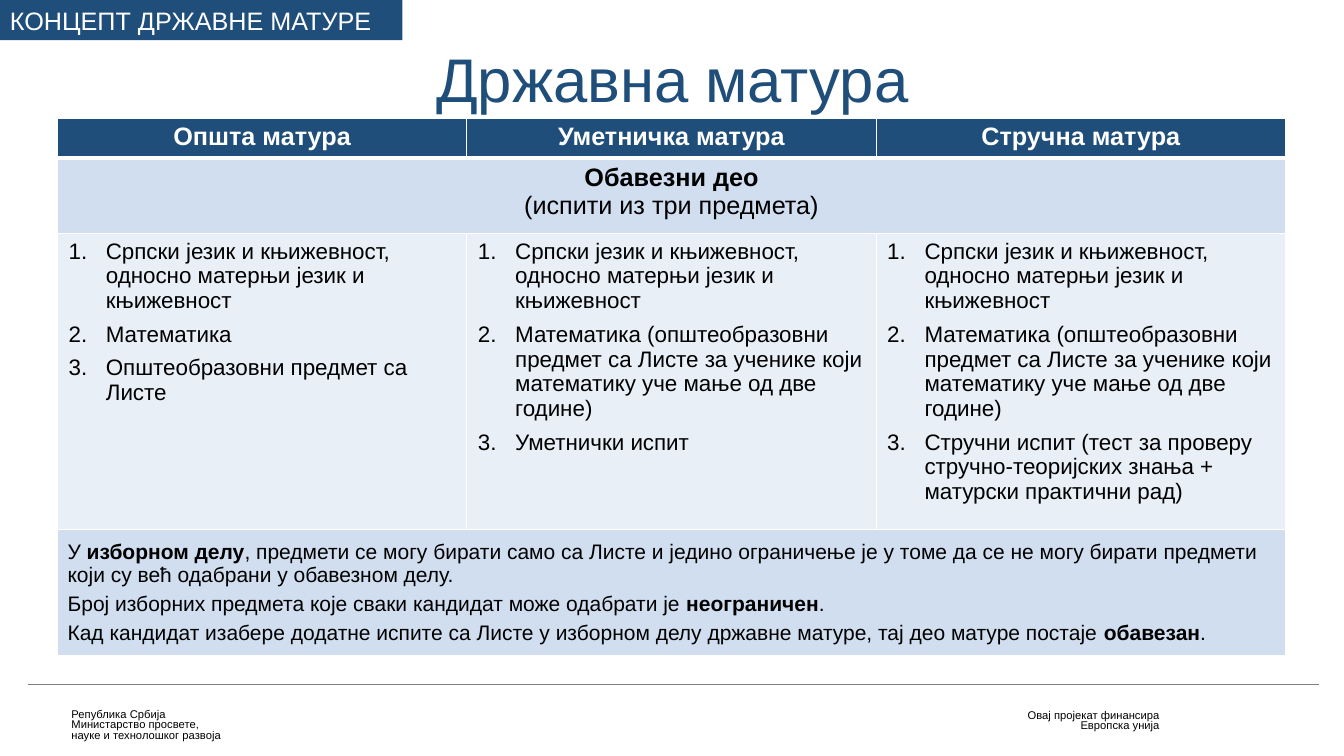
"""Builds the slide that compares the three kinds of state graduation exam."""
import pptx
import pptx.dml.color
import pptx.enum.shapes
import pptx.enum.text
import pptx.oxml.ns
import pptx.util
import lxml.etree

Inches = pptx.util.Inches
Align = pptx.enum.text.PP_ALIGN
Anchor = pptx.enum.text.MSO_ANCHOR

NAVY, WHITE, BLACK, GREY = "1E4E79", "FFFFFF", "000000", "7F7F7F"
BAND, PALE = "D1DEEF", "E9EFF7"
COLUMN_WIDTH = 4.06
ROW_HEIGHTS = [0.4, 0.75, 2.9, 1.25]

HEADERS = ["Општа матура", "Уметничка матура", "Стручна матура"]
LANGUAGE = "Српски језик и књижевност, односно матерњи језик и књижевност"
MATHEMATICS = ("Математика (општеобразовни предмет са Листе за ученике "
               "који математику уче мање од две године)")
EXAMS = [
    [LANGUAGE, "Математика", "Општеобразовни предмет са Листе"],
    [LANGUAGE, MATHEMATICS, "Уметнички испит"],
    [LANGUAGE, MATHEMATICS,
     "Стручни испит (тест за проверу стручно-теоријских знања + матурски практични рад)"],
]
ELECTIVE = [
    "У *изборном делу*, предмети се могу бирати само са Листе и једино ограничење је "
    "у томе да се не могу бирати предмети који су већ одабрани у обавезном делу.",
    "Број изборних предмета које сваки кандидат може одабрати је *неограничен*.",
    "Кад кандидат изабере додатне испите са Листе у изборном делу државне матуре, "
    "тај део матуре постаје *обавезан*.",
]


def color(value):
    """Return the colour for a hex string."""
    return pptx.dml.color.RGBColor.from_string(value)


def add_xml(parent, tag, **attributes):
    """Append a drawing element to a parent and return it."""
    return lxml.etree.SubElement(parent, pptx.oxml.ns.qn(tag), attributes)


def number_paragraph(paragraph):
    """Give a paragraph a hanging automatic number."""
    properties = paragraph._p.get_or_add_pPr()
    properties.set("marL", str(Inches(0.38)))
    properties.set("indent", str(Inches(-0.37)))
    add_xml(add_xml(properties, "a:buClr"), "a:srgbClr", val=BLACK)
    add_xml(properties, "a:buFont", typeface="+mj-lt")
    add_xml(properties, "a:buAutoNum", type="arabicPeriod")


def write_text(frame, paragraphs, size=18, ink=BLACK, align=Align.LEFT, spacing=None,
               before=0, after=0, numbered=False):
    """Fill a text frame with paragraphs, where asterisks enclose bold words."""
    frame.word_wrap = True
    for index, text in enumerate(paragraphs):
        paragraph = frame.add_paragraph() if index else frame.paragraphs[0]
        if numbered:
            number_paragraph(paragraph)
        paragraph.alignment = align
        paragraph.line_spacing = spacing
        paragraph.space_before = pptx.util.Pt(before if index else 0)
        paragraph.space_after = pptx.util.Pt(after)
        for line_number, line in enumerate(text.split("\n")):
            if line_number:
                paragraph.add_line_break()
            for part_number, part in enumerate(line.split("*")):
                if part:
                    run = paragraph.add_run()
                    run.text = part
                    run.font.name = "Arial"
                    run.font.size = pptx.util.Pt(size)
                    run.font.bold = part_number % 2 == 1
                    run.font.color.rgb = color(ink)


def format_cell(cell, fill, top=0.96, bottom=0.96):
    """Set the white borders and the fill of a table cell."""
    properties = cell._tc.get_or_add_tcPr()
    for side, width in {"L": 0.96, "R": 0.96, "T": top, "B": bottom}.items():
        border = add_xml(properties, f"a:ln{side}", w=str(pptx.util.Pt(width)))
        add_xml(add_xml(border, "a:solidFill"), "a:srgbClr", val=WHITE)
    cell.fill.solid()
    cell.fill.fore_color.rgb = color(fill)


def add_exam_table(slide):
    """Add the table of compulsory and elective exams."""
    table = slide.shapes.add_table(
        len(ROW_HEIGHTS), len(HEADERS), Inches(0.57), Inches(1.17),
        Inches(COLUMN_WIDTH * len(HEADERS)), Inches(sum(ROW_HEIGHTS))).table
    for column in table.columns:
        column.width = Inches(COLUMN_WIDTH)
    for row, height in zip(table.rows, ROW_HEIGHTS):
        row.height = Inches(height)

    for index, (header, exams) in enumerate(zip(HEADERS, EXAMS)):
        format_cell(table.cell(0, index), NAVY, bottom=3)
        format_cell(table.cell(1, index), BAND, top=3)
        format_cell(table.cell(2, index), PALE)
        format_cell(table.cell(3, index), BAND)
        write_text(table.cell(0, index).text_frame, [f"*{header}*"], ink=WHITE,
                   align=Align.CENTER)
        write_text(table.cell(2, index).text_frame, exams, size=16, after=6, numbered=True)

    for row in (1, 3):
        table.cell(row, 0).merge(table.cell(row, len(HEADERS) - 1))
    write_text(table.cell(1, 0).text_frame, ["*Обавезни део*\n(испити из три предмета)"],
               align=Align.CENTER)
    elective = table.cell(3, 0)
    elective.vertical_anchor = Anchor.MIDDLE
    write_text(elective.text_frame, ELECTIVE, size=15, before=4)


def add_title(slide, text):
    """Place and format the title placeholder."""
    title = slide.shapes.title
    title.left, title.top = Inches(0.92), Inches(0.26)
    title.width, title.height = Inches(11.5), Inches(1.12)
    title.text_frame.auto_size = pptx.enum.text.MSO_AUTO_SIZE.NONE
    title.text_frame.vertical_anchor = Anchor.MIDDLE
    write_text(title.text_frame, [text], size=44, ink=NAVY, align=Align.CENTER, spacing=0.9)


def add_footer(slide, left, top, width, height, lines, align):
    """Add a small footer text box."""
    box = slide.shapes.add_textbox(Inches(left), Inches(top), Inches(width), Inches(height))
    write_text(box.text_frame, lines, size=8, align=align, spacing=0.8)


def add_rule(slide):
    """Add the grey line above the footer."""
    rule = slide.shapes.add_connector(
        pptx.enum.shapes.MSO_CONNECTOR.STRAIGHT,
        Inches(0.28), Inches(6.79), Inches(13.08), Inches(6.79))
    rule.line.color.rgb = color(GREY)
    rule.line.width = pptx.util.Pt(1)
    add_xml(rule._element.spPr, "a:effectLst")


def add_section_tag(slide, text):
    """Add the filled section label in the top left corner."""
    tag = slide.shapes.add_shape(pptx.enum.shapes.MSO_SHAPE.RECTANGLE,
                                 0, 0, Inches(3.99), Inches(0.4))
    tag.shadow.inherit = False
    tag.fill.solid()
    tag.fill.fore_color.rgb = color(NAVY)
    tag.line.fill.background()
    tag.text_frame.vertical_anchor = Anchor.TOP
    write_text(tag.text_frame, [text], ink=WHITE)


def main():
    """Build and save the presentation."""
    presentation = pptx.Presentation()
    presentation.slide_width = Inches(13.33)
    presentation.slide_height = Inches(7.5)
    slide = presentation.slides.add_slide(presentation.slide_layouts[5])
    add_footer(slide, 10.09, 7, 1.51, 0.31,
               ["Овај пројекат финансира", "Европска унија"], Align.RIGHT)
    add_footer(slide, 0.61, 6.99, 1.69, 0.42,
               ["Република Србија", "Министарство просвете,", "науке и технолошког развоја"],
               Align.LEFT)
    add_rule(slide)
    add_title(slide, "Државна матура")
    add_exam_table(slide)
    add_section_tag(slide, "КОНЦЕПТ ДРЖАВНЕ МАТУРЕ")
    presentation.save("out.pptx")


if __name__ == "__main__":
    main()
